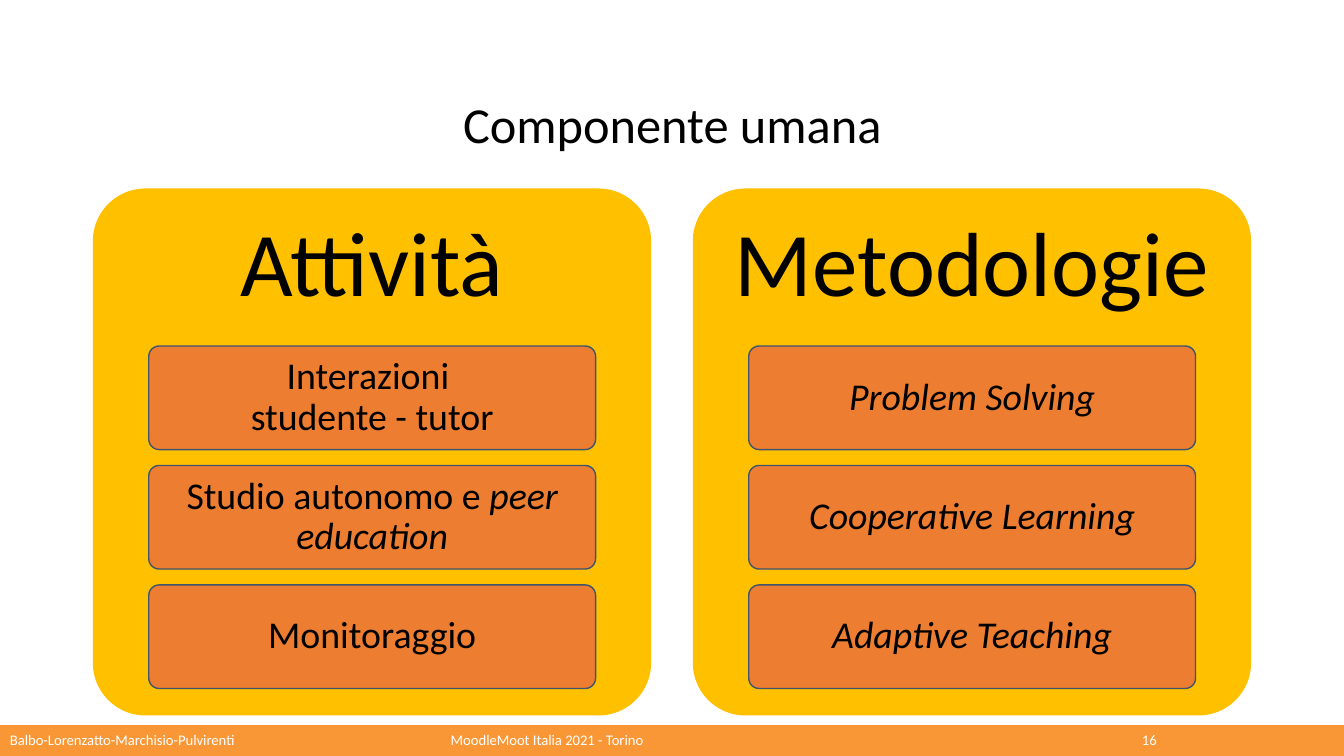
"""Build the slide on the human component: activities and methodologies."""
from pptx import Presentation
from pptx import util as u
from pptx.dml.color import RGBColor
from pptx.enum import shapes, text

COLORS = {
    "panel": "FFC000",
    "card": "ED7D31",
    "outline": "3F546D",
    "footer": "F99737",
    "ink": "000000",
    "paper": "FFFFFF",
}
SLIDE_W, SLIDE_H = 33.87, 19.05
PANEL_LEFT, PANEL_TOP, PANEL_W, PANEL_H, PANEL_STEP = 2.34, 4.75, 14.07, 13.28, 15.12
CARD_INDENT, CARD_TOP, CARD_W, CARD_H, CARD_STEP = 1.41, 8.72, 11.26, 2.61, 3.01
HEADING_H = 3.98
FOOTER_TOP, FOOTER_H = 18.27, 0.78

COLUMNS = [
    ("Attività", [
        [("Interazioni \vstudente - tutor", False)],
        [("Studio autonomo e ", False), ("peer education", True)],
        [("Monitoraggio", False)],
    ]),
    ("Metodologie", [
        [("Problem Solving", True)],
        [("Cooperative Learning", True)],
        [("Adaptive Teaching", True)],
    ]),
]
FOOTER = [
    (0.25, "Balbo-Lorenzatto-Marchisio-Pulvirenti"),
    (11.36, "MoodleMoot Italia 2021 - Torino"),
    (28.78, "16"),
]


def rgb(name):
    return RGBColor.from_string(COLORS[name])


def write(frame, runs, size, color="ink", align=text.PP_ALIGN.CENTER, inset=(0, 0)):
    frame.word_wrap = True
    frame.vertical_anchor = text.MSO_ANCHOR.MIDDLE
    frame.margin_left = frame.margin_right = u.Cm(inset[0])
    frame.margin_top = frame.margin_bottom = u.Cm(inset[1])
    paragraph = frame.paragraphs[0]
    paragraph.alignment = align
    paragraph.line_spacing = 0.9
    for words, italic in runs:
        for index, line in enumerate(words.split("\v")):
            if index:
                paragraph.add_line_break()
            run = paragraph.add_run()
            run.text = line
            run.font.name = "Calibri"
            run.font.size = u.Pt(size)
            run.font.italic = italic
            run.font.color.rgb = rgb(color)


def add_label(slide, box, words, size, **style):
    label = slide.shapes.add_textbox(*map(u.Cm, box))
    write(label.text_frame, [(words, False)], size, **style)


def add_block(slide, box, fill, rounded=True, outline=None):
    kind = shapes.MSO_SHAPE.ROUNDED_RECTANGLE if rounded else shapes.MSO_SHAPE.RECTANGLE
    block = slide.shapes.add_shape(kind, *map(u.Cm, box))
    block.shadow.inherit = False
    block.fill.solid()
    block.fill.fore_color.rgb = rgb(fill)
    if rounded:
        block.adjustments[0] = 0.1
    if outline:
        block.line.color.rgb = rgb(outline)
        block.line.width = u.Pt(1)
    else:
        block.line.fill.background()
    return block


def add_column(slide, left, heading, cards):
    add_block(slide, (left, PANEL_TOP, PANEL_W, PANEL_H), "panel")
    add_label(slide, (left, PANEL_TOP, PANEL_W, HEADING_H), heading, 65, inset=(0.69, 0.69))
    for row, runs in enumerate(cards):
        box = (left + CARD_INDENT, CARD_TOP + row * CARD_STEP, CARD_W, CARD_H)
        card = add_block(slide, box, "card", outline="outline")
        write(card.text_frame, runs, 27, inset=(0.18, 0.15))


def add_footer(slide):
    add_block(slide, (0, FOOTER_TOP, SLIDE_W, FOOTER_H), "footer", rounded=False)
    for left, words in FOOTER:
        width = min(10, SLIDE_W - left)
        add_label(slide, (left, FOOTER_TOP, width, FOOTER_H), words, 10.5,
                  color="paper", align=text.PP_ALIGN.LEFT)


def main():
    deck = Presentation()
    deck.slide_width, deck.slide_height = u.Cm(SLIDE_W), u.Cm(SLIDE_H)
    slide = deck.slides.add_slide(deck.slide_layouts[6])
    slide.background.fill.solid()
    slide.background.fill.fore_color.rgb = rgb("paper")
    add_footer(slide)
    add_label(slide, (PANEL_LEFT, 1.88, 29.21, 2.67), "Componente umana", 36)
    for number, (heading, cards) in enumerate(COLUMNS):
        add_column(slide, PANEL_LEFT + number * PANEL_STEP, heading, cards)
    deck.save("out.pptx")


if __name__ == "__main__":
    main()
